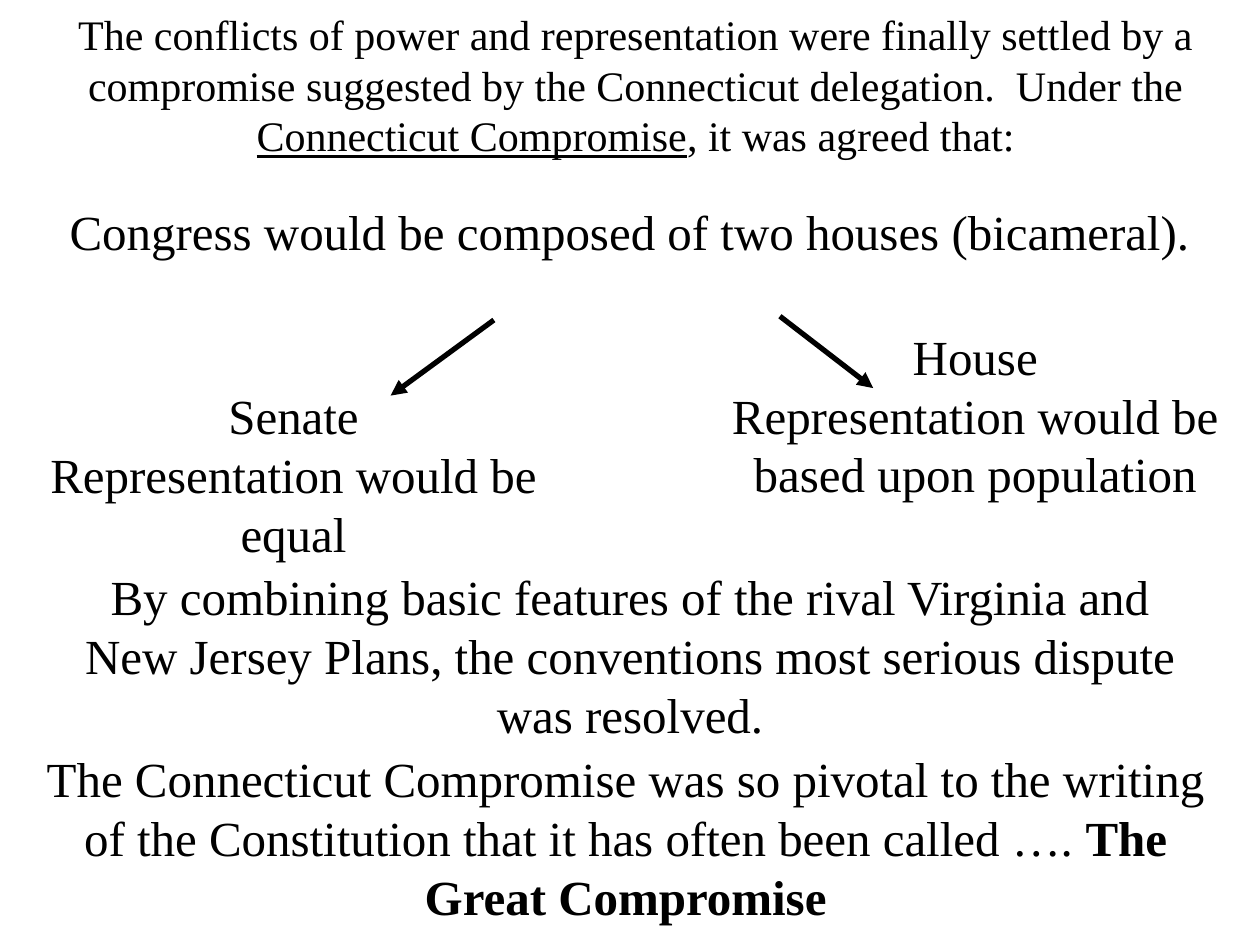
"""Build a slide on how the Connecticut Compromise shaped Congress."""
import pptx
import pptx.util
import pptx.dml.color
import pptx.enum.shapes
import pptx.enum.text
import pptx.oxml.ns
import lxml.etree

BLACK = pptx.dml.color.RGBColor(0, 0, 0)
WHITE = pptx.dml.color.RGBColor(255, 255, 255)
FONT = "Times New Roman"
inch = pptx.util.Inches

deck = pptx.Presentation()
deck.slide_width, deck.slide_height = inch(10), inch(7.5)
slide = deck.slides.add_slide(deck.slide_layouts[5])
slide.background.fill.solid()
slide.background.fill.fore_color.rgb = WHITE


def write(shape, box, size, paras):
    shape.left, shape.top, shape.width, shape.height = map(inch, box)
    frame = shape.text_frame
    frame.word_wrap = True
    frame.auto_size = pptx.enum.text.MSO_AUTO_SIZE.SHAPE_TO_FIT_TEXT
    frame.vertical_anchor = pptx.enum.text.MSO_ANCHOR.TOP
    frame.text = "\n".join([""] * len(paras))
    for para, parts in zip(frame.paragraphs, paras):
        para.alignment = pptx.enum.text.PP_ALIGN.CENTER
        for text, style in parts:
            run = para.add_run()
            run.text = text
            run.font.name, run.font.size = FONT, pptx.util.Pt(size)
            run.font.color.rgb = BLACK
            if style:
                setattr(run.font, style, True)


write(slide.shapes.title, (0.3, 0.02, 9.49, 1.31), 24, [[
    ("The conflicts of power and representation were finally settled by a compromise "
     "suggested by the Connecticut delegation.  Under the ", None),
    ("Connecticut Compromise", "underline"),
    (", it was agreed that:", None)]])

notes = [
    ((0.25, 1.55, 9.49, 0.57),
     [[("Congress would be composed of two houses (bicameral).", None)]]),
    ((0.13, 3.01, 4.4, 1.51),
     [[("Senate", None)], [("Representation would be equal", None)]]),
    ((5.69, 2.54, 4.1, 1.51),
     [[("House", None)], [("Representation would be based upon population", None)]]),
    ((0.44, 4.45, 9.12, 1.51),
     [[("By combining basic features of the rival Virginia and New Jersey Plans, "
        "the conventions most serious dispute was resolved.", None)]]),
    ((0.22, 5.89, 9.49, 1.51),
     [[("The Connecticut Compromise was so pivotal to the writing of the Constitution "
        "that it has often been called …. ", None),
       ("The Great Compromise", "bold")]]),
]
for box, paras in notes:
    write(slide.shapes.add_textbox(*map(inch, box)), box, 28, paras)

for ends in [(3.92, 2.54, 3.1, 3.14), (6.19, 2.51, 6.93, 3.08)]:
    arrow = slide.shapes.add_connector(
        pptx.enum.shapes.MSO_CONNECTOR.STRAIGHT, *map(inch, ends))
    arrow.line.color.rgb = BLACK
    arrow.line.width = pptx.util.Pt(3)
    props = arrow.line._get_or_add_ln()
    lxml.etree.SubElement(props, pptx.oxml.ns.qn("a:tailEnd"), type="triangle")
    lxml.etree.SubElement(props.getparent(), pptx.oxml.ns.qn("a:effectLst"))

deck.save("out.pptx")
